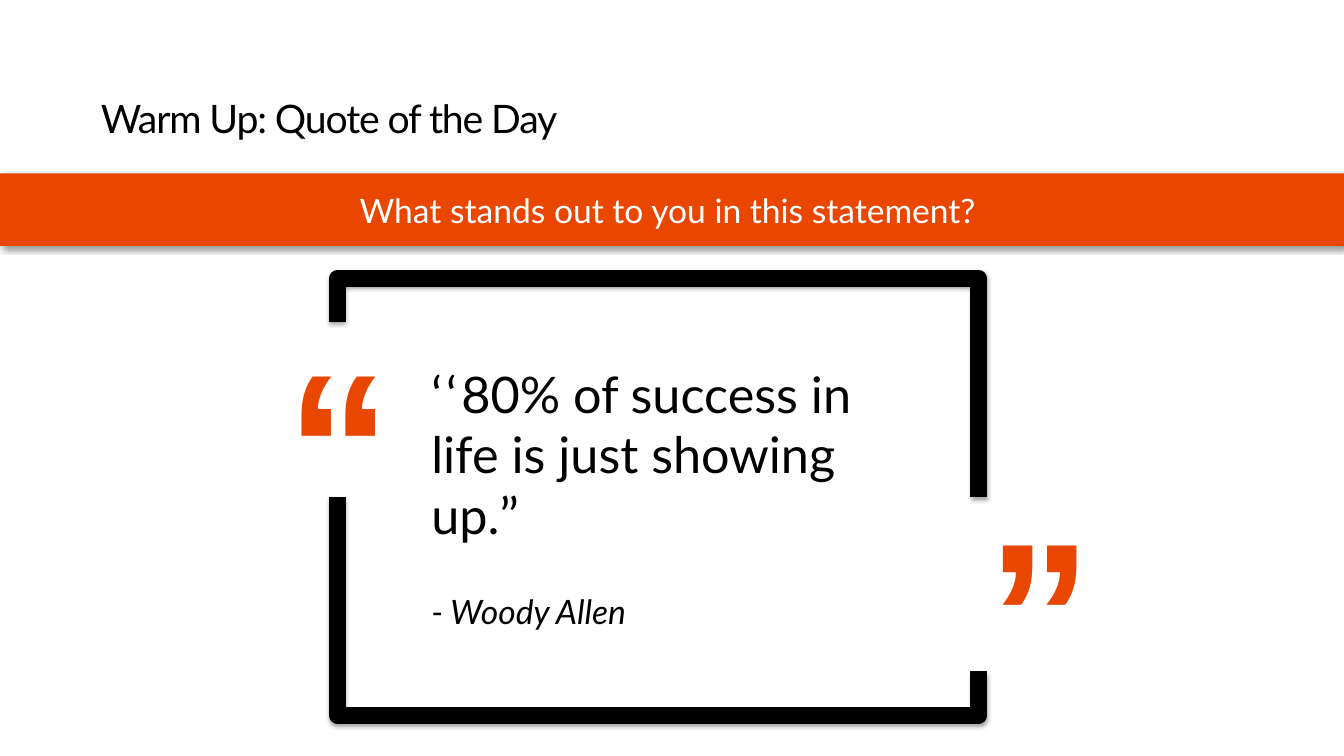
from lxml.etree import SubElement
from pptx import Presentation
from pptx.dml.color import RGBColor
from pptx.enum.shapes import MSO_SHAPE
from pptx.enum.text import MSO_ANCHOR as Anchor, PP_ALIGN as Align
from pptx.oxml.ns import qn
from pptx.util import Cm, Pt

BLACK = RGBColor(0x00, 0x00, 0x00)
WHITE = RGBColor(0xFF, 0xFF, 0xFF)
ORANGE = RGBColor(0xE9, 0x46, 0x00)
SLIDE_WIDTH, SLIDE_HEIGHT = 33.87, 19.05


class QuoteSlide:
    """Holds the slide and the style of its text, banner and quote frame."""

    def __init__(self, presentation):
        self.slide = presentation.slides.add_slide(presentation.slide_layouts[6])
        self.font = "Lato"

    def add_run(self, paragraph, text, size, color=BLACK, spacing=0, font=None,
                bold=False, italic=False):
        run = paragraph.add_run()
        run.text = text
        run.font.name = font or self.font
        run.font.size = Pt(size)
        run.font.bold = bold
        run.font.italic = italic
        run.font.color.rgb = color
        if spacing:
            run.font._element.set("spc", str(round(spacing * 100)))

    def add_text_box(self, left, top, width, height, anchor=Anchor.TOP, insets=None):
        box = self.slide.shapes.add_textbox(Cm(left), Cm(top), Cm(width), Cm(height))
        frame = box.text_frame
        frame.word_wrap = True
        frame.vertical_anchor = anchor
        if insets:
            (frame.margin_left, frame.margin_top,
             frame.margin_right, frame.margin_bottom) = map(Cm, insets)
        return frame

    def add_shadow(self, shape, opacity, blur, distance, angle):
        shape.shadow.inherit = False
        effects = shape._element.spPr.find(qn("a:effectLst"))
        shadow = SubElement(effects, qn("a:outerShdw"), blurRad=str(Pt(blur)),
                            dist=str(Pt(distance)), dir=str(angle * 60000),
                            algn="tl", rotWithShape="0")
        color = SubElement(shadow, qn("a:srgbClr"), val=str(BLACK))
        SubElement(color, qn("a:alpha"), val=str(opacity * 1000))

    def add_banner(self, text, top, height):
        banner = self.slide.shapes.add_shape(
            MSO_SHAPE.RECTANGLE, 0, Cm(top), Cm(SLIDE_WIDTH), Cm(height))
        banner.fill.solid()
        banner.fill.fore_color.rgb = ORANGE
        banner.line.fill.background()
        self.add_shadow(banner, opacity=40, blur=4, distance=3, angle=45)
        banner.text_frame.vertical_anchor = Anchor.MIDDLE
        paragraph = banner.text_frame.paragraphs[0]
        paragraph.alignment = Align.CENTER
        self.add_run(paragraph, text, 24, WHITE)

    def add_quote_mark(self, mark, left, top):
        frame = self.add_text_box(left, top, 2.03, 6.68)
        self.add_run(frame.paragraphs[0], mark, 150, ORANGE, font="Arial", bold=True)

    def add_bracket(self, points):
        start, *corners = [(Cm(x), Cm(y)) for x, y in points]
        builder = self.slide.shapes.build_freeform(*start)
        builder.add_line_segments(corners, close=False)
        bracket = builder.convert_to_shape()
        bracket.fill.background()
        bracket.line.color.rgb = BLACK
        bracket.line.width = Pt(12)
        self.add_shadow(bracket, opacity=35, blur=3.1, distance=1.8, angle=90)

    def add_frame(self, left, top, right, middle, stub):
        upper = [(left, top + stub), (left, top), (right, top), (right, middle)]
        lower = [(left + right - x, 2 * middle - y) for x, y in upper]
        self.add_bracket(upper)
        self.add_bracket(lower)


def main():
    presentation = Presentation()
    presentation.slide_width = Cm(SLIDE_WIDTH)
    presentation.slide_height = Cm(SLIDE_HEIGHT)
    page = QuoteSlide(presentation)

    title = page.add_text_box(2.54, 1.93, 28.78, 1.65, Anchor.BOTTOM, (0, 0.13, 0, 0))
    title.paragraphs[0].line_spacing = 0.9
    page.add_run(title.paragraphs[0], "Warm Up: Quote of the Day", 28, spacing=-0.8)

    page.add_banner("What stands out to you in this statement? ", 4.37, 1.83)

    quote = page.add_text_box(10.87, 9.88, 12.24, 5.28, Anchor.MIDDLE, (0, 0, 0, 0))
    saying = quote.paragraphs[0]
    page.add_run(saying, "‘‘", 36, spacing=3)
    page.add_run(saying, "80% of success in life is just showing up.", 36)
    page.add_run(saying, "’’", 36, spacing=-1.5)
    author = quote.add_paragraph()
    author.space_before = Pt(33)
    page.add_run(author, "- Woody Allen", 24, italic=True)

    page.add_quote_mark("“", 6.96, 7.72)
    page.add_quote_mark("”", 24.64, 11.99)
    page.add_frame(left=8.51, top=7.01, right=24.66, middle=12.52, stub=1.11)

    presentation.save("out.pptx")


if __name__ == "__main__":
    main()
